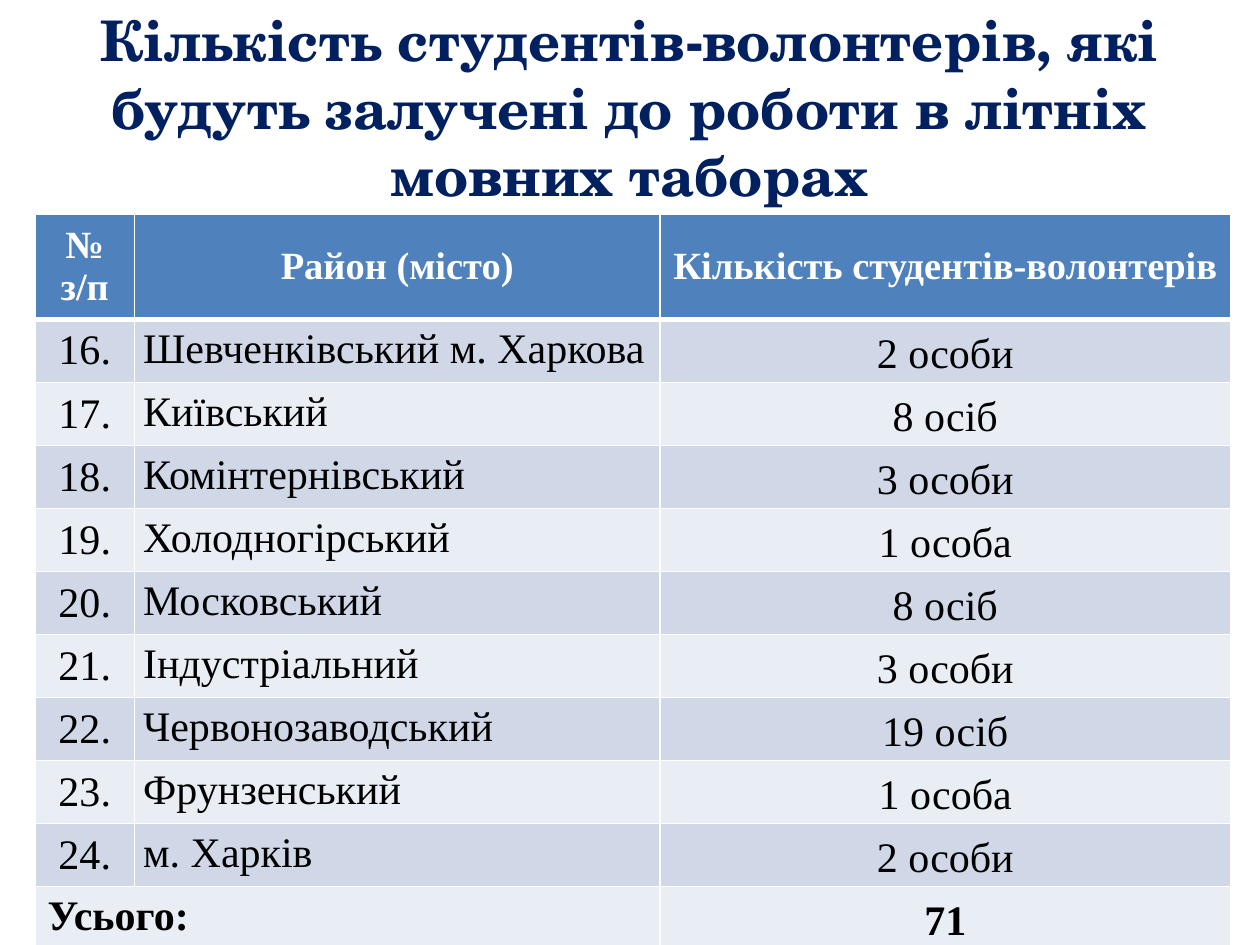
from lxml import etree
from pptx import Presentation
from pptx.dml.color import RGBColor
from pptx.enum.text import MSO_ANCHOR, PP_ALIGN
from pptx.oxml.ns import qn
from pptx.util import Pt

MIDDLE, TOP = MSO_ANCHOR.MIDDLE, MSO_ANCHOR.TOP
CENTER, LEFT = PP_ALIGN.CENTER, PP_ALIGN.LEFT


def color(value):
    return RGBColor.from_string(value)


def style_text(text_frame, size, font_name, font_color, bold, alignment):
    paragraph = text_frame.paragraphs[0]
    paragraph.alignment = alignment
    font = paragraph.runs[0].font
    font.size = Pt(size)
    font.name = font_name
    font.bold = bold
    font.color.rgb = color(font_color)
    return paragraph


header = ["№ з/п", "Район (місто)", "Кількість студентів-волонтерів"]
districts = [
    ("Шевченківський м. Харкова", "2 особи"),
    ("Київський", "8 осіб"),
    ("Комінтернівський", "3 особи"),
    ("Холодногірський", "1 особа"),
    ("Московський", "8 осіб"),
    ("Індустріальний", "3 особи"),
    ("Червонозаводський", "19 осіб"),
    ("Фрунзенський", "1 особа"),
    ("м. Харків", "2 особи"),
]
rows = [header]
for number, (district, count) in enumerate(districts, start=16):
    rows.append([f"{number}.", district, count])
rows.append(["Усього:", "", "71"])
last_row = len(rows) - 1

presentation = Presentation()
presentation.slide_width = Pt(720)
presentation.slide_height = Pt(540)
slide = presentation.slides.add_slide(presentation.slide_layouts[6])

title = slide.shapes.add_textbox(Pt(0), Pt(16), Pt(720), Pt(90))
title_frame = title.text_frame
title_frame.word_wrap = True
title_frame.vertical_anchor = MIDDLE
title_frame.text = "Кількість студентів-волонтерів, які будуть залучені до роботи в літніх мовних таборах"
style_text(title_frame, 32, "TeX Gyre Schola", "002060", True, CENTER)

header_height, row_height = 59.8, 35.7
column_widths = [56.8, 300.4, 326]
table = slide.shapes.add_table(
    len(rows), len(header), Pt(20), Pt(122.4),
    Pt(sum(column_widths)), Pt(header_height + row_height * last_row),
).table
for column, width in zip(table.columns, column_widths):
    column.width = Pt(width)
for row_index, row in enumerate(table.rows):
    row.height = Pt(row_height if row_index else header_height)
table.cell(last_row, 0).merge(table.cell(last_row, 1))

for row_index, texts in enumerate(rows):
    is_header = row_index == 0
    is_total = row_index == last_row
    for column_index, text in enumerate(texts):
        cell = table.cell(row_index, column_index)

        properties = cell._tc.get_or_add_tcPr()
        for side in ("lnL", "lnR", "lnT", "lnB"):
            thick = (is_header and side == "lnB") or (row_index == 1 and side == "lnT")
            line = etree.SubElement(properties, qn(f"a:{side}"), w=str(Pt(3 if thick else 1)))
            line_fill = etree.SubElement(line, qn("a:solidFill"))
            etree.SubElement(line_fill, qn("a:srgbClr"), val="FFFFFF")

        cell.fill.solid()
        band = "D0D8E8" if row_index % 2 else "E9EDF4"
        cell.fill.fore_color.rgb = color("4F81BD" if is_header else band)
        if not text:
            continue

        is_left = not is_header and (column_index == 1 or text == "Усього:")
        cell.vertical_anchor = TOP if is_left else MIDDLE
        cell.text_frame.text = text
        paragraph = style_text(
            cell.text_frame,
            22 if is_header else 24,
            "Times New Roman",
            "FFFFFF" if is_header else "000000",
            is_header or is_total,
            LEFT if is_left else CENTER,
        )
        if not is_header and column_index > 0:
            cell.margin_left = cell.margin_right = Pt(5)
            cell.margin_top = cell.margin_bottom = Pt(0)
            paragraph.line_spacing = 1.15

presentation.save("out.pptx")
